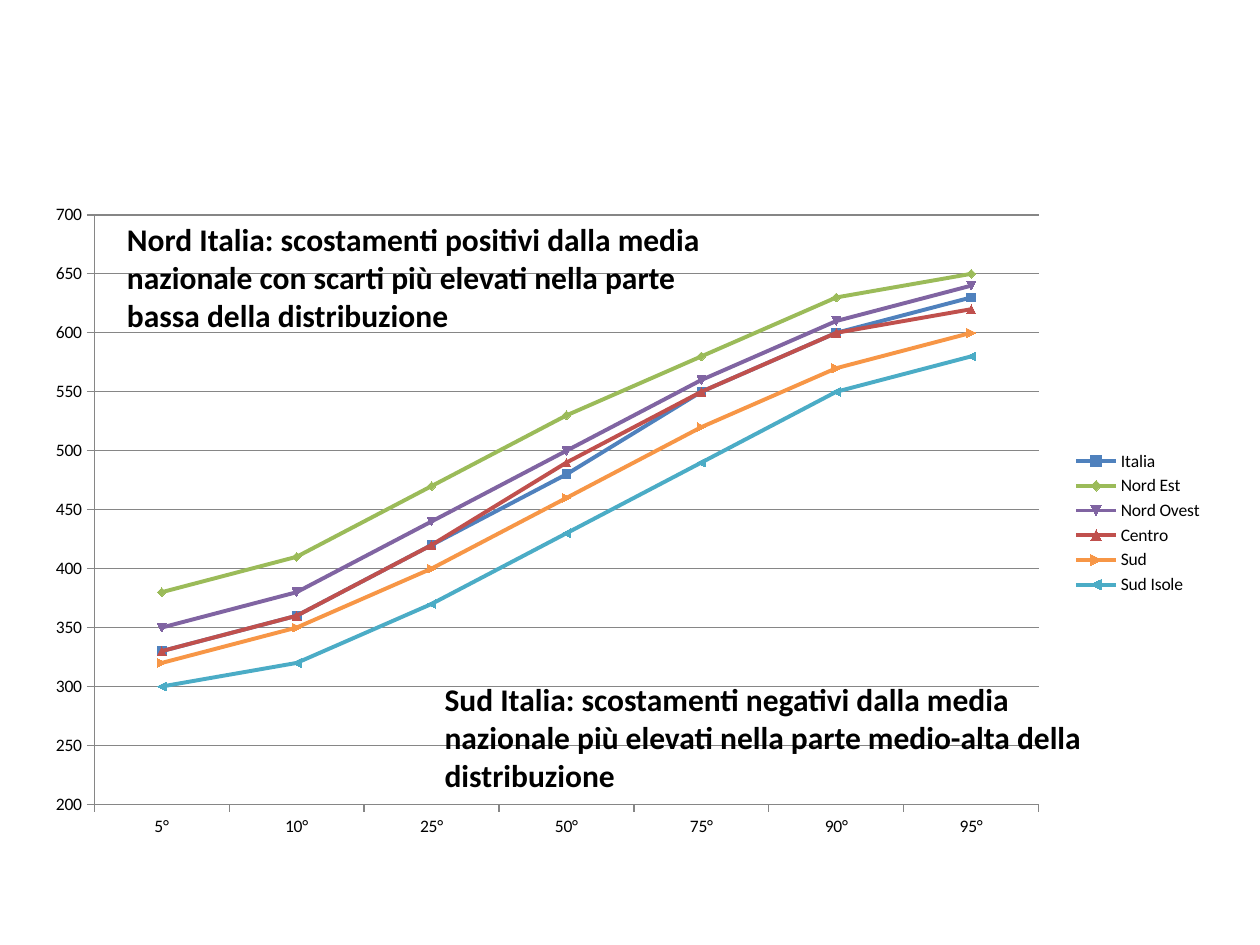
from lxml.etree import SubElement
from pptx import Presentation
from pptx.chart.data import CategoryChartData
from pptx.dml.color import RGBColor
from pptx.enum.chart import XL_CHART_TYPE as ChartType
from pptx.enum.chart import XL_LEGEND_POSITION as LegendPosition
from pptx.enum.chart import XL_TICK_MARK as TickMark
from pptx.enum.text import MSO_AUTO_SIZE as AutoSize
from pptx.oxml.ns import qn
from pptx.util import Inches, Pt

PERCENTILES = ["5°", "10°", "25°", "50°", "75°", "90°", "95°"]
AREAS = [
    ("Italia", "4F81BD", [330, 360, 420, 480, 550, 600, 630]),
    ("Nord Est", "9BBB59", [380, 410, 470, 530, 580, 630, 650]),
    ("Nord Ovest", "8064A2", [350, 380, 440, 500, 560, 610, 640]),
    ("Centro", "C0504D", [330, 360, 420, 490, 550, 600, 620]),
    ("Sud", "F79646", [320, 350, 400, 460, 520, 570, 600]),
    ("Sud Isole", "4BACC6", [300, 320, 370, 430, 490, 550, 580]),
]


def color(hex_string):
    return RGBColor.from_string(hex_string)


class SlideBuilder:
    font_name = "Calibri"
    text_color = "000000"
    axis_color = "868686"

    def __init__(self, slide):
        self.slide = slide

    def style_font(self, font, size, bold=False):
        font.name = self.font_name
        font.size = Pt(size)
        font.bold = bold
        font.color.rgb = color(self.text_color)

    def style_line(self, line, hex_string, width):
        line.color.rgb = color(hex_string)
        line.width = Pt(width)

    def comment(self, text, left, top, width, height):
        box = self.slide.shapes.add_textbox(
            Inches(left), Inches(top), Inches(width), Inches(height))
        frame = box.text_frame
        frame.word_wrap = True
        frame.auto_size = AutoSize.SHAPE_TO_FIT_TEXT
        paragraph = frame.paragraphs[0]
        paragraph.text = text
        self.style_font(paragraph.font, 18, bold=True)

    def line_chart(self, categories, areas, left, top, width, height):
        data = CategoryChartData(number_format="0")
        data.categories = categories
        for name, _, values in areas:
            data.add_series(name, values)
        chart = self.slide.shapes.add_chart(
            ChartType.LINE_MARKERS, Inches(left), Inches(top),
            Inches(width), Inches(height), data).chart
        self.style_font(chart.font, 10)
        chart.has_title = False
        chart.has_legend = True
        chart.legend.position = LegendPosition.RIGHT
        chart.legend.include_in_layout = False

        for series, (_, hex_string, _) in zip(chart.plots[0].series, areas):
            series.smooth = False
            self.style_line(series.format.line, hex_string, 2.25)
            marker = series.marker.format
            marker.fill.solid()
            marker.fill.fore_color.rgb = color(hex_string)
            marker.line.color.rgb = color(hex_string)

        for axis in (chart.category_axis, chart.value_axis):
            axis.major_tick_mark = TickMark.OUTSIDE
            axis.minor_tick_mark = TickMark.NONE
            self.style_line(axis.format.line, self.axis_color, 0.75)
        value_axis = chart.value_axis
        value_axis.minimum_scale = 200
        value_axis.maximum_scale = 700
        value_axis.major_unit = 50
        value_axis.tick_labels.number_format = "0"
        value_axis.tick_labels.number_format_is_linked = False
        value_axis.has_major_gridlines = True
        self.style_line(value_axis.major_gridlines.format.line, self.axis_color, 0.75)
        return chart

    def place_plot(self, chart, x, y, w, h):
        """Fix the inner plot area, in fractions of the chart frame."""
        plot_area = chart.element.find(".//" + qn("c:plotArea"))
        for old_layout in plot_area.findall(qn("c:layout")):
            plot_area.remove(old_layout)
        layout = SubElement(plot_area, qn("c:layout"))
        plot_area.insert(0, layout)
        manual = SubElement(layout, qn("c:manualLayout"))
        settings = [("layoutTarget", "inner"), ("xMode", "edge"), ("yMode", "edge"),
                    ("x", x), ("y", y), ("w", w), ("h", h)]
        for tag, value in settings:
            SubElement(manual, qn("c:" + tag)).set("val", str(value))


def main():
    presentation = Presentation()
    presentation.slide_width = Inches(10)
    presentation.slide_height = Inches(7.5)
    blank_layout = presentation.slide_layouts[6]
    builder = SlideBuilder(presentation.slides.add_slide(blank_layout))

    chart = builder.line_chart(PERCENTILES, AREAS, 0.28, 1.55, 9.37, 5.2)
    builder.place_plot(chart, 0.05, 0.03, 0.8, 0.9)
    builder.comment(
        "Nord Italia: scostamenti positivi dalla media nazionale con scarti "
        "più elevati nella parte bassa della distribuzione",
        0.91, 1.7, 5.04, 1.01)
    builder.comment(
        "Sud Italia: scostamenti negativi dalla media nazionale più elevati "
        "nella parte medio-alta della distribuzione",
        3.43, 5.35, 5.49, 1.01)
    presentation.save("out.pptx")


if __name__ == "__main__":
    main()
